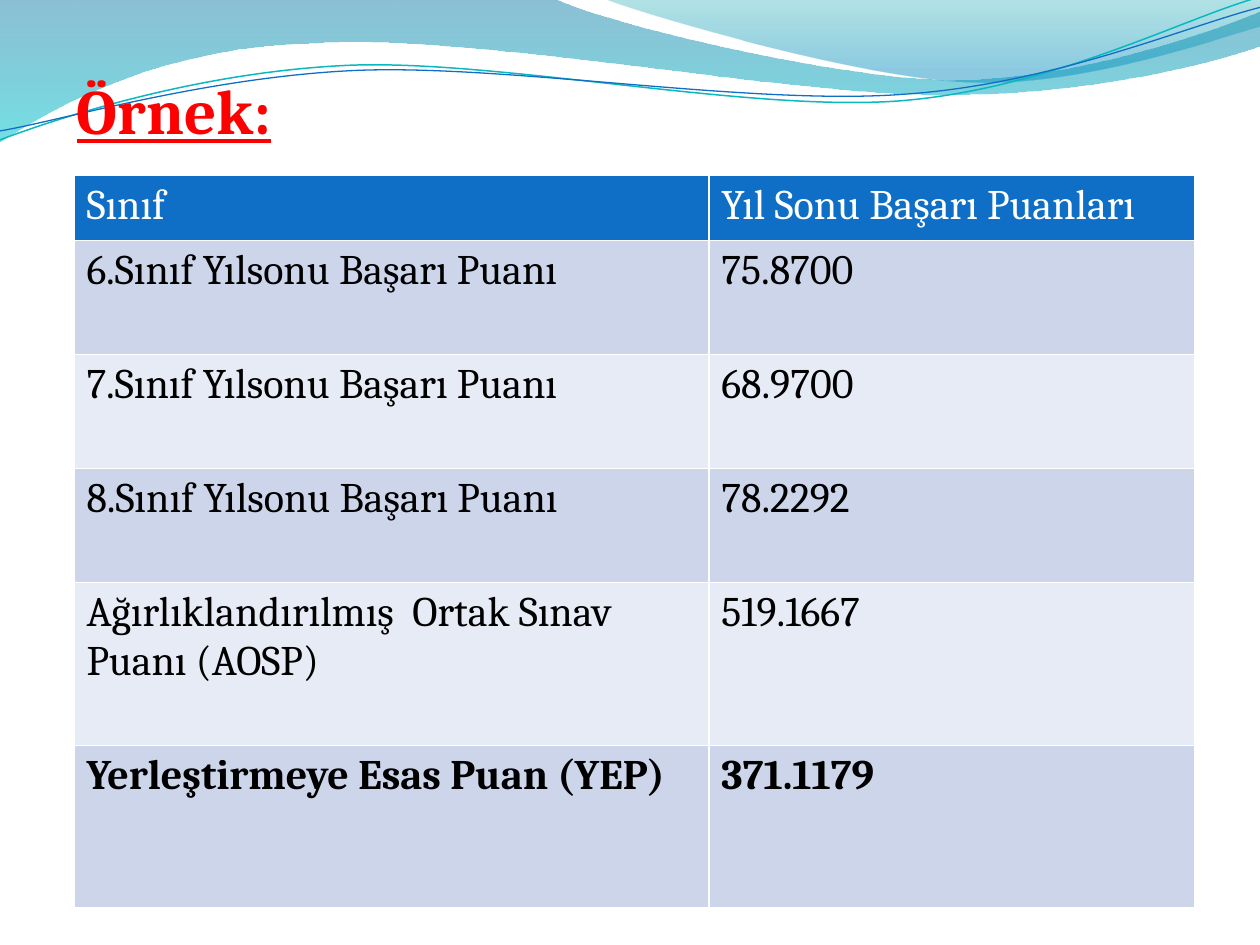
"""Build the worked placement-score example slide with its wave header."""
from dataclasses import dataclass
from typing import Any, Optional

import lxml.etree
import pptx
import pptx.dml.color
import pptx.oxml.ns
import pptx.util

Cm = pptx.util.Cm
Pt = pptx.util.Pt
qn = pptx.oxml.ns.qn
Point = tuple[float, float]
UNITS_PER_CM = 1000


@dataclass(frozen=True)
class Theme:
    font: str = "Cambria"
    title_size: int = 36
    table_size: int = 24
    title: str = "FF0000"
    header: str = "0F6FC6"
    header_text: str = "FFFFFF"
    body_text: str = "000000"
    bands: tuple[str, str] = ("CCD5EA", "E7EBF5")
    border: str = "FFFFFF"
    border_width: float = 1
    teal_line: str = "0AB8BF"


@dataclass(frozen=True)
class Stop:
    position: float
    color: str
    opacity: int


@dataclass(frozen=True)
class Wave:
    start: Point
    segments: tuple[tuple[Point, ...], ...]
    stops: tuple[Stop, ...] = ()
    line: Optional[str] = None
    width: float = 0.75
    rotation: float = 0


@dataclass(frozen=True)
class ScoreRow:
    label: str
    score: str
    height: float
    bold: bool = False


THEME = Theme()

WAVES = (
    Wave((0, 0), (
        ((11.18, -0.03),),
        ((12.09, 0.43), (16.87, 1.6), (19.25, 1.6)),
        ((21.67, 1.6), (24.33, 0.66), (25.4, 0.23)),
        ((25.43, 0.91),),
        ((24.97, 1.12), (22.1, 1.93), (18.95, 1.91)),
        ((15.8, 1.91), (9.7, 0.71), (6.53, 0.86)),
        ((3.25, 0.91), (1.17, 2.11), (-0.03, 2.87)),
        ((0, 0),),
    ), stops=(Stop(0, "0074A1", 45), Stop(1, "00C6CF", 55))),
    Wave((12.17, -0.03), (
        ((12.93, 0.28), (17.32, 1.57), (19.53, 1.65)),
        ((21.74, 1.75), (24.41, 0.81), (25.4, 0.53)),
        ((25.4, 0),),
        ((12.17, -0.03),),
    ), stops=(Stop(0, "00A1A9", 30), Stop(0.8, "008BBF", 45))),
    Wave((-0.05, 2.22), (
        ((1.19, 1.82), (4.02, 1.04), (7.05, 1.05)),
        ((10.05, 1.07), (15.02, 2.37), (18.08, 2.29)),
        ((21.13, 2.2), (23.86, 0.91), (25.41, 0.55)),
    ), line=THEME.teal_line, width=0.85, rotation=357.3),
    Wave((-0.04, 2.04), (
        ((1.16, 1.9), (4.17, 1.15), (7.2, 1.16)),
        ((10.25, 1.18), (15.13, 2.25), (18.19, 2.16)),
        ((21.22, 2.1), (23.93, 1.06), (25.45, 0.75)),
    ), line=THEME.header, rotation=357.3),
)

COLUMN_WIDTHS = (12.8, 9.8)
SCORES = (
    ScoreRow("Sınıf", "Yıl Sonu Başarı Puanları", 1.32),
    ScoreRow("6.Sınıf Yılsonu Başarı Puanı", "75.8700", 2.3),
    ScoreRow("7.Sınıf Yılsonu Başarı Puanı", "68.9700", 2.3),
    ScoreRow("8.Sınıf Yılsonu Başarı Puanı", "78.2292", 2.3),
    ScoreRow("Ağırlıklandırılmış  Ortak Sınav Puanı (AOSP)", "519.1667", 3.28),
    ScoreRow("Yerleştirmeye Esas Puan (YEP)", "371.1179", 3.28, bold=True),
)


def rgb(color: str) -> pptx.dml.color.RGBColor:
    """Return the colour object for a hex value."""
    return pptx.dml.color.RGBColor.from_string(color)


def write(frame: Any, text: str, color: str, **formats: Any) -> None:
    """Write one run of text with the given font formats."""
    run = frame.paragraphs[0].add_run()
    run.text = text
    run.font.color.rgb = rgb(color)
    for name, value in {"name": THEME.font, **formats}.items():
        setattr(run.font, name, value)


def bend(outline: Any, segments: tuple[tuple[Point, ...], ...]) -> None:
    """Merge the three legs of each curved segment into a cubic curve."""
    legs = iter(list(outline._element.spPr.iter(qn("a:lnTo"))))
    for segment in segments:
        parts = [next(legs) for _ in segment]
        if len(parts) == 3:
            curve = lxml.etree.Element(qn("a:cubicBezTo"))
            parts[0].addprevious(curve)
            for part in parts:
                curve.append(part[0])
                part.getparent().remove(part)


def draw_wave(slide: Any, wave: Wave) -> None:
    """Draw a gradient band or a thin curve."""
    points = [wave.start, *(point for segment in wave.segments for point in segment)]
    first, *rest = [(x * UNITS_PER_CM, y * UNITS_PER_CM) for x, y in points]
    builder = slide.shapes.build_freeform(*first, scale=Cm(1) / UNITS_PER_CM)
    builder.add_line_segments(rest, close=bool(wave.stops))
    band = builder.convert_to_shape()
    bend(band, wave.segments)
    band.rotation = wave.rotation
    band.shadow.inherit = False
    if wave.line:
        band.fill.background()
        band.line.color.rgb = rgb(wave.line)
        band.line.width = Pt(wave.width)
        return
    band.line.fill.background()
    band.fill.gradient()
    band.fill.gradient_angle = 270
    for target, stop in zip(band.fill.gradient_stops, wave.stops):
        target.position = stop.position
        target.color.rgb = rgb(stop.color)
    for color, stop in zip(band._element.spPr.iter(qn("a:srgbClr")), wave.stops):
        lxml.etree.SubElement(color, qn("a:alpha"), val=str(stop.opacity * 1000))


def draw_title(slide: Any) -> None:
    """Draw the underlined heading."""
    heading = slide.shapes.add_textbox(Cm(1.3), Cm(1.32), Cm(22.83), Cm(1.9))
    heading.text_frame.word_wrap = True
    write(heading.text_frame, "Örnek:", THEME.title,
          size=Pt(THEME.title_size), bold=True, underline=True)


def add_borders(cell: Any) -> None:
    """Give a cell white edges."""
    properties = cell._tc.get_or_add_tcPr()
    for index, edge in enumerate(("lnL", "lnR", "lnT", "lnB")):
        line = lxml.etree.Element(qn(f"a:{edge}"), w=str(Pt(THEME.border_width)))
        fill = lxml.etree.SubElement(line, qn("a:solidFill"))
        lxml.etree.SubElement(fill, qn("a:srgbClr"), val=THEME.border)
        properties.insert(index, line)


def draw_scores(slide: Any) -> None:
    """Draw the score table with a header and alternating bands."""
    scores = slide.shapes.add_table(
        len(SCORES), len(COLUMN_WIDTHS), Cm(1.49), Cm(3.53),
        Cm(sum(COLUMN_WIDTHS)), Cm(sum(row.height for row in SCORES))).table
    for column, width in zip(scores.columns, COLUMN_WIDTHS):
        column.width = Cm(width)
    for index, row in enumerate(SCORES):
        scores.rows[index].height = Cm(row.height)
        is_header = index == 0
        background = THEME.header if is_header else THEME.bands[(index - 1) % 2]
        ink = THEME.header_text if is_header else THEME.body_text
        for cell, text in zip(scores.rows[index].cells, (row.label, row.score)):
            cell.fill.solid()
            cell.fill.fore_color.rgb = rgb(background)
            add_borders(cell)
            write(cell.text_frame, text, ink, size=Pt(THEME.table_size), bold=row.bold)


def main() -> None:
    """Build and save the slide."""
    deck = pptx.Presentation()
    deck.slide_width, deck.slide_height = Cm(25.4), Cm(19.05)
    slide = deck.slides.add_slide(deck.slide_layouts[6])
    for wave in WAVES:
        draw_wave(slide, wave)
    draw_title(slide)
    draw_scores(slide)
    deck.save("out.pptx")


if __name__ == "__main__":
    main()
